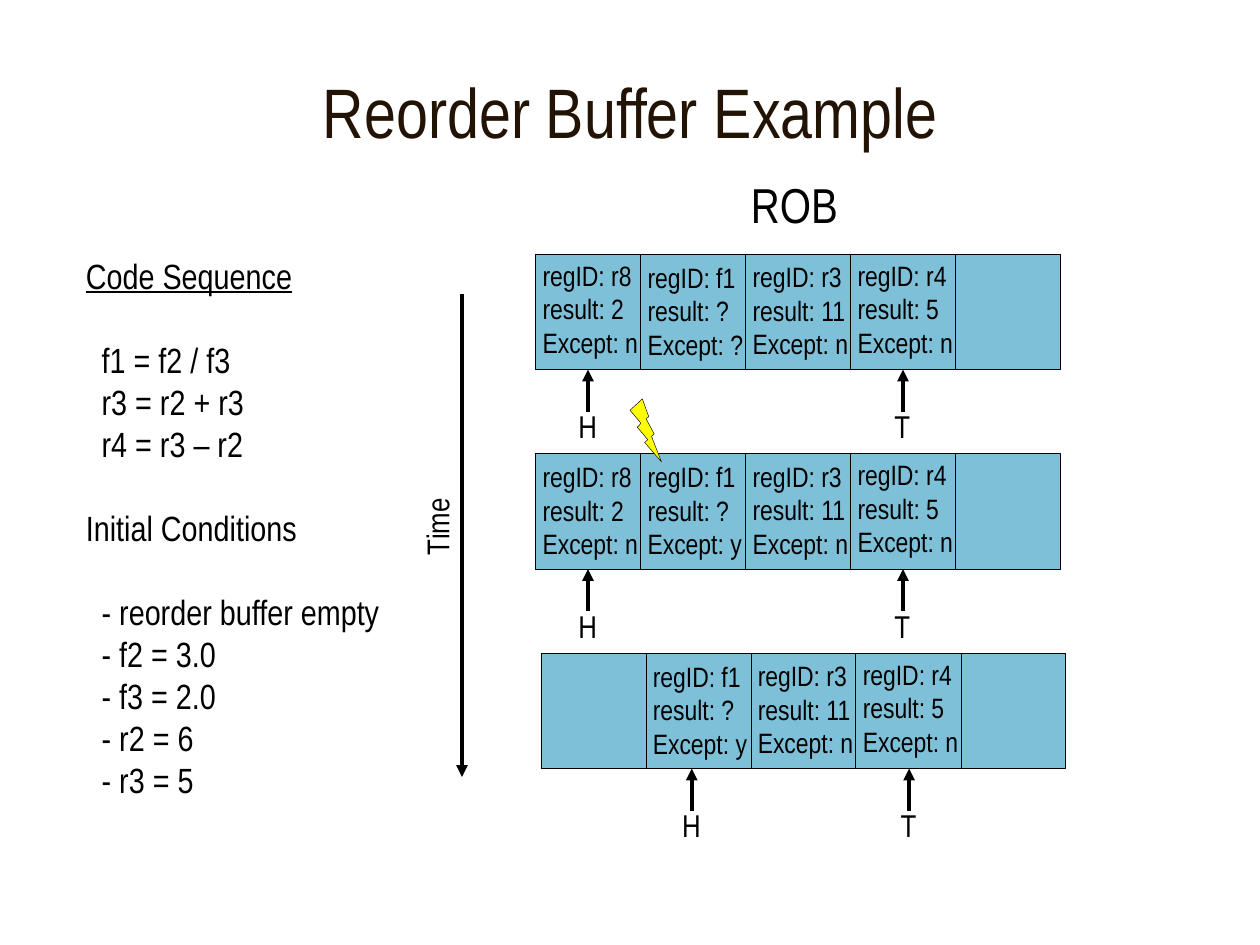
from dataclasses import dataclass

from lxml.etree import SubElement
from pptx import Presentation
from pptx.dml.color import RGBColor
from pptx.enum.shapes import MSO_CONNECTOR as Connector, MSO_SHAPE as Preset
from pptx.enum.text import MSO_ANCHOR as Anchor, MSO_AUTO_SIZE as AutoSize, PP_ALIGN as Align
from pptx.oxml.ns import qn
from pptx.util import Pt

FONT = "Arial Narrow"
BLACK = RGBColor(0x00, 0x00, 0x00)
TITLE_BROWN = RGBColor(0x22, 0x13, 0x04)
BUFFER_BLUE = RGBColor(0x7E, 0xC0, 0xD8)
BOLT_YELLOW = RGBColor(0xFF, 0xFF, 0x00)

CELL_COUNT = 5
CELL_WIDTH = 60
ROW_HEIGHT = 66
ROW_PITCH = 114
FIRST_ROW_TOP = 145.2
POINTER_LENGTH = 24
HAIRLINE = 0.25
THICK = 2.25


@dataclass(frozen=True)
class Entry:
    cell: int
    register: str
    result: str
    exception: str
    shift: float = 0  # vertical nudge of the text


@dataclass(frozen=True)
class BufferRow:
    left: float
    head: float  # pointer offsets from the row's left edge
    tail: float
    entries: tuple[Entry, ...]


R8 = Entry(0, "r8", "2", "n")
R3 = Entry(2, "r3", "11", "n", -0.4)
R4 = Entry(3, "r4", "5", "n", -1.2)
F1_FAULT = Entry(1, "f1", "?", "y")

ROWS = (
    BufferRow(306, 30, 210, (Entry(0, "r8", "2", "n", -1.2), Entry(1, "f1", "?", "?"), R3, R4)),
    BufferRow(306, 30, 210, (R8, F1_FAULT, R3, R4)),
    BufferRow(309, 86.3, 210.5, (F1_FAULT, R3, R4)),
)

# Text, left indent and space before, in points
CODE_LINES = (
    ("Code Sequence", 0, 0),
    ("f1 = f2 / f3", 9, 24),
    ("r3 = r2 + r3", 9, 0),
    ("r4 = r3 – r2", 9, 0),
    ("Initial Conditions", 0, 24),
    ("- reorder buffer empty", 9, 24),
    ("- f2 = 3.0", 9, 0),
    ("- f3 = 2.0", 9, 0),
    ("- r2 = 6", 9, 0),
    ("- r3 = 5", 9, 0),
)


def format_text(box, size: float, colour: RGBColor = BLACK) -> None:
    for para in box.text_frame.paragraphs:
        for span in para.runs:
            span.font.name = FONT
            span.font.size = Pt(size)
            span.font.color.rgb = colour


def add_text(page, text: str, left: float, top: float, width: float, height: float, size: float):
    box = page.shapes.add_textbox(Pt(left), Pt(top), Pt(width), Pt(height))
    box.text_frame.text = text
    box.text_frame.word_wrap = False
    box.text_frame.auto_size = AutoSize.SHAPE_TO_FIT_TEXT
    format_text(box, size)
    return box


def add_line(page, x: float, start: float, end: float, weight: float, arrow: bool = False) -> None:
    """Draw a vertical line, with an optional arrowhead at its end."""
    line = page.shapes.add_connector(Connector.STRAIGHT, Pt(x), Pt(start), Pt(x), Pt(end))
    line.line.color.rgb = BLACK
    line.line.width = Pt(weight)
    properties = line._element.spPr
    if arrow:
        SubElement(properties.find(qn("a:ln")), qn("a:tailEnd"), type="triangle")
    SubElement(properties, qn("a:effectLst"))


def add_preset(page, preset, left: float, top: float, width: float, height: float, fill: RGBColor) -> None:
    shape = page.shapes.add_shape(preset, Pt(left), Pt(top), Pt(width), Pt(height))
    shape.shadow.inherit = False
    shape.fill.solid()
    shape.fill.fore_color.rgb = fill
    shape.line.color.rgb = BLACK
    shape.line.width = Pt(HAIRLINE)


def add_pointer(page, label: str, x: float, row_bottom: float, width: float) -> None:
    add_line(page, x, row_bottom + POINTER_LENGTH, row_bottom, THICK, arrow=True)
    add_text(page, label, x - width / 2, row_bottom + 18, width, 29, 18)


def add_buffer_row(page, row: BufferRow, top: float) -> None:
    bottom = top + ROW_HEIGHT
    add_preset(page, Preset.RECTANGLE, row.left, top, CELL_COUNT * CELL_WIDTH, ROW_HEIGHT, BUFFER_BLUE)
    for divider in range(1, CELL_COUNT):
        add_line(page, row.left + divider * CELL_WIDTH, top, bottom, HAIRLINE)
    add_pointer(page, "H", row.left + row.head, bottom, 25)
    add_pointer(page, "T", row.left + row.tail, bottom, 24)
    for entry in row.entries:
        text = f"regID: {entry.register}\nresult: {entry.result}\nExcept: {entry.exception}"
        left = row.left + entry.cell * CELL_WIDTH - 3
        add_text(page, text, left, top + entry.shift, 69, 65, 16)


def add_code_notes(page) -> None:
    text = "\n".join(line for line, _, _ in CODE_LINES)
    box = add_text(page, text, 42, 142, 182, 319, 20)
    for para, (_, indent, gap) in zip(box.text_frame.paragraphs, CODE_LINES):
        para.space_before = Pt(gap)
        para._p.get_or_add_pPr().set("marL", str(Pt(indent)))
    box.text_frame.paragraphs[0].runs[0].font.underline = True


def main() -> None:
    deck = Presentation()
    deck.slide_width, deck.slide_height = Pt(720), Pt(540)
    page = deck.slides.add_slide(deck.slide_layouts[5])

    # Title
    title = page.shapes.title
    title.left, title.top, title.width, title.height = Pt(60), Pt(30), Pt(600), Pt(66)
    title.text_frame.text = "Reorder Buffer Example"
    title.text_frame.vertical_anchor = Anchor.MIDDLE
    title.text_frame.paragraphs[0].alignment = Align.CENTER
    format_text(title, 40, TITLE_BROWN)

    # Code, heading and time axis
    add_code_notes(page)
    add_text(page, "ROB", 422, 96, 64, 41, 28)
    add_line(page, 264, 168, 444, THICK, arrow=True)
    add_text(page, "Time", 226, 286, 47.5, 29, 18).rotation = 270

    # Buffer states over time
    for index, row in enumerate(ROWS):
        add_buffer_row(page, row, FIRST_ROW_TOP + index * ROW_PITCH)

    # Exception raised by f1
    add_preset(page, Preset.LIGHTNING_BOLT, 360, 228, 18, 36, BOLT_YELLOW)

    deck.save("out.pptx")


if __name__ == "__main__":
    main()
